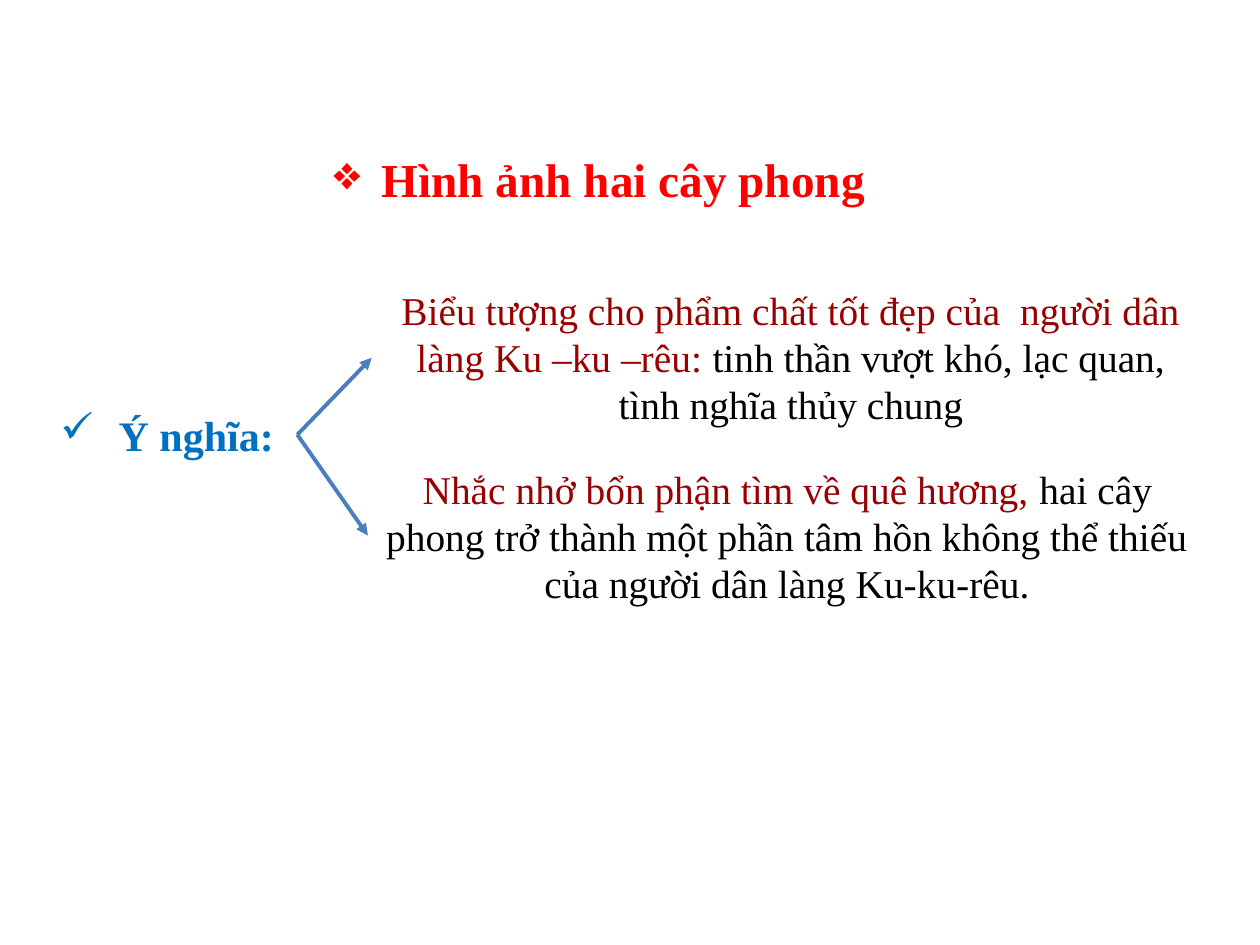
from dataclasses import dataclass

from lxml import etree
from pptx import Presentation
from pptx.dml.color import RGBColor
from pptx.enum.shapes import MSO_CONNECTOR
from pptx.enum.text import MSO_AUTO_SIZE, PP_ALIGN
from pptx.oxml.ns import qn
from pptx.util import Inches, Pt

STRAIGHT = MSO_CONNECTOR.STRAIGHT
GROW = MSO_AUTO_SIZE.SHAPE_TO_FIT_TEXT
LEFT, CENTER, JUSTIFY = PP_ALIGN.LEFT, PP_ALIGN.CENTER, PP_ALIGN.JUSTIFY


@dataclass(frozen=True)
class Theme:
    font: str = "Times New Roman"
    title: str = "FF0000"
    label: str = "0070C0"
    emphasis: str = "990000"
    body: str = "000000"
    arrow: str = "4B7EBC"
    title_size: float = 27
    label_size: float = 24
    body_size: float = 22.5
    arrow_width: float = 2.25
    bullet_indent: float = 0.38


THEME = Theme()


def add_text(page, bounds, spans, size, align, bold=False, wrap=True):
    """Add one paragraph made of (text, colour) spans and return it."""
    box = page.shapes.add_textbox(*map(Inches, bounds))
    frame = box.text_frame
    frame.word_wrap = wrap
    frame.auto_size = GROW
    para = frame.paragraphs[0]
    para.alignment = align
    font_format = {"name": THEME.font, "size": Pt(size), "bold": bold}
    for text, colour in spans:
        span = para.add_run()
        span.text = text
        for name, value in font_format.items():
            setattr(span.font, name, value)
        span.font.color.rgb = RGBColor.from_string(colour)
    return para


def add_bullet(para, symbol):
    properties = para._p.get_or_add_pPr()
    indent = Inches(THEME.bullet_indent)
    properties.set("marL", str(indent))
    properties.set("indent", str(-indent))
    etree.SubElement(properties, qn("a:buChar"), char=symbol)


def add_arrow(page, start, end):
    arrow = page.shapes.add_connector(STRAIGHT, *map(Inches, start + end))
    arrow.line.color.rgb = RGBColor.from_string(THEME.arrow)
    arrow.line.width = Pt(THEME.arrow_width)
    etree.SubElement(arrow.line._get_or_add_ln(), qn("a:tailEnd"), type="triangle")
    etree.SubElement(arrow._element.spPr, qn("a:effectLst"))


def main():
    deck = Presentation()
    deck.slide_width, deck.slide_height = Inches(10), Inches(7.5)
    page = deck.slides.add_slide(deck.slide_layouts[6])

    title = add_text(page, (2.55, 1.14, 4.45, 0.56),
                     [("Hình ảnh hai cây phong", THEME.title)],
                     THEME.title_size, LEFT, bold=True, wrap=False)
    add_bullet(title, "❖")
    label = add_text(page, (0.38, 3.2, 1.98, 0.5), [(" Ý nghĩa:", THEME.label)],
                     THEME.label_size, JUSTIFY, bold=True)
    add_bullet(label, "✓")

    meanings = [
        ((2.95, 2.22), (2.95, 2.84),
         "Biểu tượng cho phẩm chất tốt đẹp của  người dân làng Ku –ku –rêu: ",
         "tinh thần vượt khó, lạc quan, tình nghĩa thủy chung"),
        ((2.92, 3.64), (2.92, 4.25),
         "Nhắc nhở bổn phận tìm về quê hương, ",
         "hai cây phong trở thành một phần tâm hồn không thể thiếu "
         "của người dân làng Ku-ku-rêu."),
    ]
    for corner, arrow_end, lead, detail in meanings:
        add_text(page, corner + (6.66, 1.24),
                 [(lead, THEME.emphasis), (detail, THEME.body)],
                 THEME.body_size, CENTER)
        add_arrow(page, (2.36, 3.45), arrow_end)

    deck.save("out.pptx")


if __name__ == "__main__":
    main()
